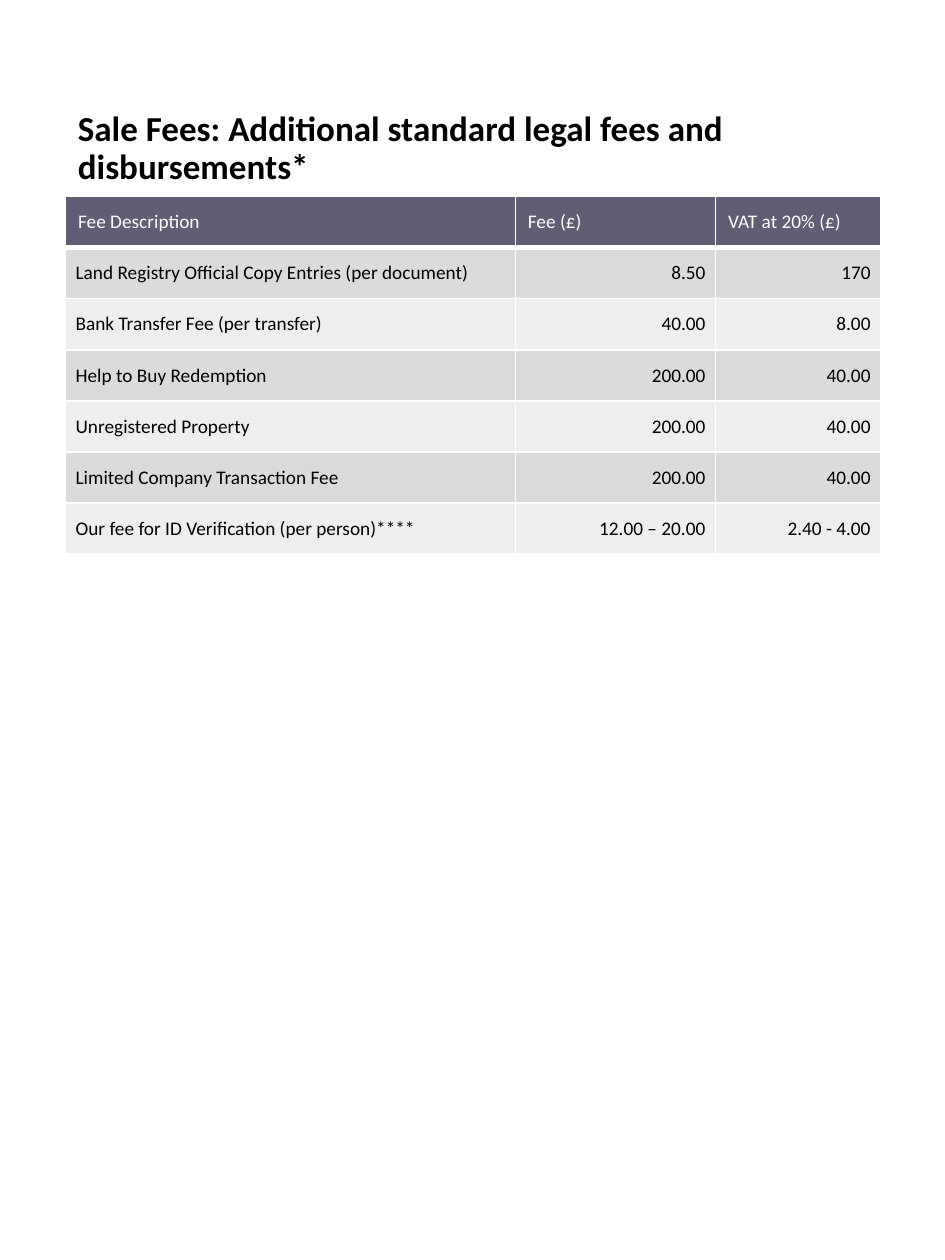
from lxml import etree
from pptx import Presentation
from pptx.dml.color import RGBColor
from pptx.enum.text import MSO_ANCHOR, PP_ALIGN
from pptx.oxml.ns import qn
from pptx.util import Inches, Pt

MIDDLE = MSO_ANCHOR.MIDDLE
LEFT, RIGHT = PP_ALIGN.LEFT, PP_ALIGN.RIGHT

TITLE = "Sale Fees: Additional standard legal fees and disbursements*"
FEES = [
    ("Fee Description", "Fee (£)", "VAT at 20% (£)"),
    ("Land Registry Official Copy Entries (per document)", "8.50", "170"),
    ("Bank Transfer Fee (per transfer)", "40.00", "8.00"),
    ("Help to Buy Redemption", "200.00", "40.00"),
    ("Unregistered Property", "200.00", "40.00"),
    ("Limited Company Transaction Fee", "200.00", "40.00"),
    ("Our fee for ID Verification (per person)****", "12.00 – 20.00", "2.40 - 4.00"),
]

FONT = "Calibri"
BLACK, WHITE = "000000", "FFFFFF"
HEADER_FILL = "605D75"
BAND_FILLS = ("EEEEEE", "DCDBDB")
MARGIN_LEFT, CONTENT_WIDTH = 0.52, 6.47
TABLE_TOP, TABLE_HEIGHT = 1.56, 2.84
COLUMN_WIDTHS = (3.57, 1.59, 1.31)


def color(value):
    return RGBColor.from_string(value)


def add_span(para, text, size, ink, bold=False):
    span = para.add_run()
    span.text = text
    span.font.name = FONT
    span.font.size = Pt(size)
    span.font.bold = bold
    span.font.color.rgb = color(ink)


def add_borders(cell, top, bottom):
    """Draw white cell borders; top and bottom are widths in points."""
    properties = cell._tc.get_or_add_tcPr()
    for side, width in (("L", 1), ("R", 1), ("T", top), ("B", bottom)):
        line = etree.SubElement(properties, qn(f"a:ln{side}"), w=str(Pt(width)))
        fill = etree.SubElement(line, qn("a:solidFill"))
        etree.SubElement(fill, qn("a:srgbClr"), val=WHITE)


def add_title(slide):
    box = slide.shapes.add_textbox(
        Inches(MARGIN_LEFT), Inches(0.53), Inches(CONTENT_WIDTH), Inches(1.31))
    frame = box.text_frame
    frame.word_wrap = True
    frame.vertical_anchor = MIDDLE
    para = frame.paragraphs[0]
    para.line_spacing = 0.9
    add_span(para, TITLE, 20, BLACK, bold=True)


def fill_cell(cell, text, row, column):
    header = row == 0
    add_borders(cell, top=3 if row == 1 else 1, bottom=3 if header else 1)
    cell.fill.solid()
    cell.fill.fore_color.rgb = color(HEADER_FILL if header else BAND_FILLS[row % 2])
    cell.vertical_anchor = MIDDLE
    cell.margin_left = cell.margin_right = Inches(0.1 if header else 0.08)
    cell.margin_top = cell.margin_bottom = Inches(0.07 if header else 0.04)
    para = cell.text_frame.paragraphs[0]
    para.alignment = LEFT if header or column == 0 else RIGHT
    add_span(para, text, 11, WHITE if header else BLACK)


def add_fee_table(slide):
    table = slide.shapes.add_table(
        len(FEES), len(COLUMN_WIDTHS), Inches(MARGIN_LEFT), Inches(TABLE_TOP),
        Inches(CONTENT_WIDTH), Inches(TABLE_HEIGHT)).table
    for column, width in zip(table.columns, COLUMN_WIDTHS):
        column.width = Inches(width)
    for row, texts in enumerate(FEES):
        for column, text in enumerate(texts):
            fill_cell(table.cell(row, column), text, row, column)


def main():
    deck = Presentation()
    deck.slide_width, deck.slide_height = Inches(7.5), Inches(10)
    slide = deck.slides.add_slide(deck.slide_layouts[6])
    add_title(slide)
    add_fee_table(slide)
    deck.save("out.pptx")


if __name__ == "__main__":
    main()
